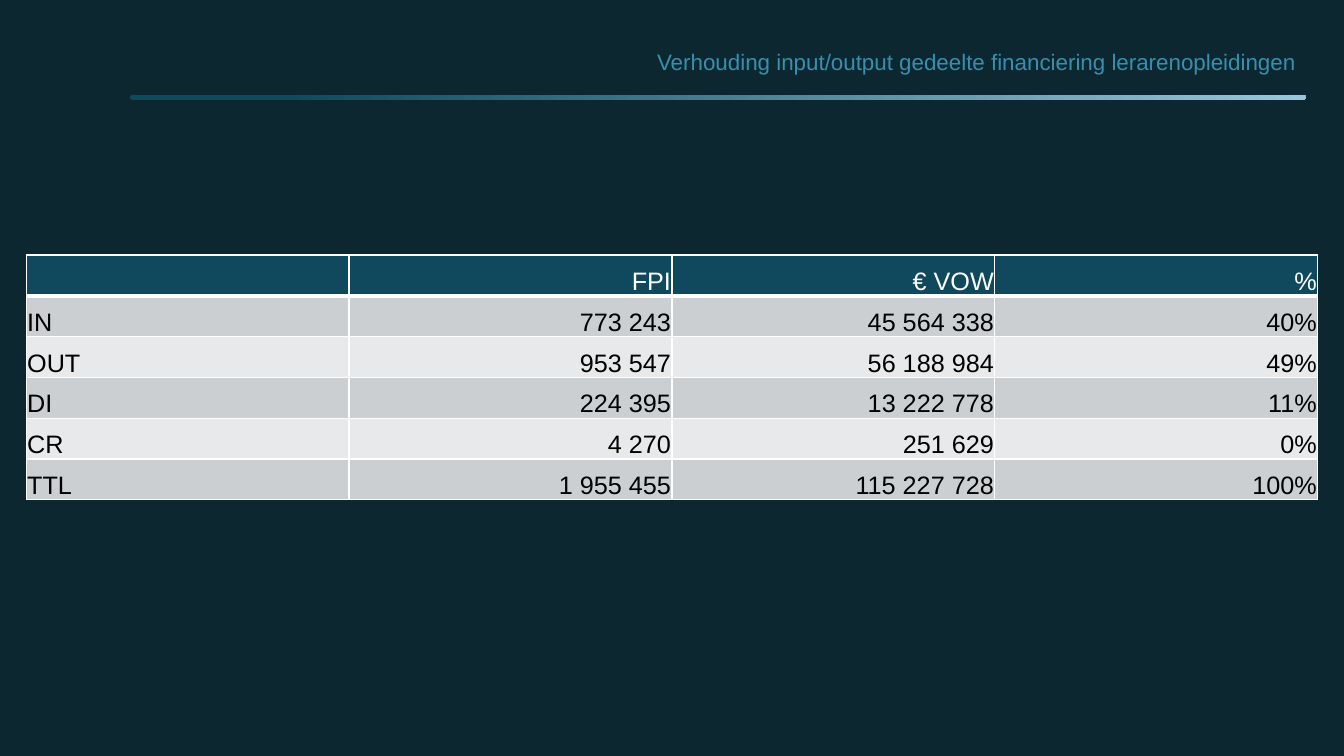
from pptx import Presentation
from pptx import util as u
from pptx.dml.color import RGBColor
from pptx.enum import shapes, text
from pptx.oxml import parse_xml
from pptx.oxml.ns import nsdecls

Inches = u.Inches
NIGHT = RGBColor(0x0D, 0x27, 0x30)
PETROL = RGBColor(0x10, 0x48, 0x5D)
SKY = RGBColor(0x97, 0xC7, 0xD8)
TITLE_BLUE = RGBColor(0x36, 0x90, 0xAD)
GREY = RGBColor(0xCC, 0xCF, 0xD2)
LIGHT_GREY = RGBColor(0xE7, 0xE9, 0xEA)
WHITE = RGBColor(0xFF, 0xFF, 0xFF)
BLACK = RGBColor(0, 0, 0)

ROWS = [
    ("", "FPI", "€ VOW", "%"),
    ("IN", "773 243", "45 564 338", "40%"),
    ("OUT", "953 547", "56 188 984", "49%"),
    ("DI", "224 395", "13 222 778", "11%"),
    ("CR", "4 270", "251 629", "0%"),
    ("TTL", "1 955 455", "115 227 728", "100%"),
]


def write(frame, words, size=18, color=BLACK, align=text.PP_ALIGN.RIGHT, spacing=None):
    para = frame.paragraphs[0]
    para.alignment = align
    para.line_spacing = spacing
    para.font.size = u.Pt(size)
    if words:
        span = para.add_run()
        span.text = words
        span.font.name = "Arial"
        span.font.size = u.Pt(size)
        span.font.color.rgb = color


def set_borders(cell, bottom=1):
    properties = cell._tc.get_or_add_tcPr()
    widths = {"lnL": 1, "lnR": 1, "lnT": 1, "lnB": bottom}
    for place, (side, width) in enumerate(widths.items()):
        properties.insert(place, parse_xml(
            f'<a:{side} {nsdecls("a")} w="{u.Pt(width)}"><a:solidFill>'
            f'<a:srgbClr val="{WHITE}"/></a:solidFill></a:{side}>'))


def add_title(page, left, top, width, height):
    box = page.shapes.add_textbox(Inches(left), Inches(top), Inches(width), Inches(height))
    frame = box.text_frame
    frame.word_wrap = True
    frame.vertical_anchor = text.MSO_ANCHOR.MIDDLE
    write(frame, "Verhouding input/output gedeelte financiering lerarenopleidingen",
          size=16, color=TITLE_BLUE, spacing=0.9)


def add_rule(page, left, top, width, height):
    rule = page.shapes.add_shape(shapes.MSO_SHAPE.ROUNDED_RECTANGLE, Inches(left),
                                 Inches(top), Inches(width), Inches(height))
    rule.adjustments[0] = 0.5
    rule.shadow.inherit = False
    rule.line.fill.background()
    rule.fill.gradient()
    rule.fill.gradient_angle = 0
    stops = [(0.13, PETROL), (1, SKY)]
    for stop, (position, color) in zip(rule.fill.gradient_stops, stops):
        stop.position = position
        stop.color.rgb = color


def add_finance_table(page, left, top, width, height):
    table = page.shapes.add_table(len(ROWS), len(ROWS[0]), Inches(left), Inches(top),
                                  Inches(width), Inches(height)).table
    for row, values in enumerate(ROWS):
        header = row == 0
        band = PETROL if header else GREY if row % 2 else LIGHT_GREY
        for column, value in enumerate(values):
            cell = table.cell(row, column)
            cell.fill.solid()
            cell.fill.fore_color.rgb = band
            cell.vertical_anchor = text.MSO_ANCHOR.BOTTOM
            cell.margin_left = cell.margin_right = cell.margin_top = Inches(0.01)
            cell.margin_bottom = 0
            write(cell.text_frame, value, color=WHITE if header else BLACK,
                  align=text.PP_ALIGN.RIGHT if column else text.PP_ALIGN.LEFT)
            set_borders(cell, bottom=3 if header else 1)


def main():
    deck = Presentation()
    deck.slide_width, deck.slide_height = Inches(13.33), Inches(7.5)
    page = deck.slides.add_slide(deck.slide_layouts[6])
    page.background.fill.solid()
    page.background.fill.fore_color.rgb = NIGHT

    # Heading with its rule
    add_rule(page, 1.29, 0.94, 11.66, 0.05)
    add_title(page, 2.17, 0.31, 10.78, 0.63)
    # Financing figures
    add_finance_table(page, 0.26, 2.53, 12.81, 2.43)
    deck.save("out.pptx")


if __name__ == "__main__":
    main()
